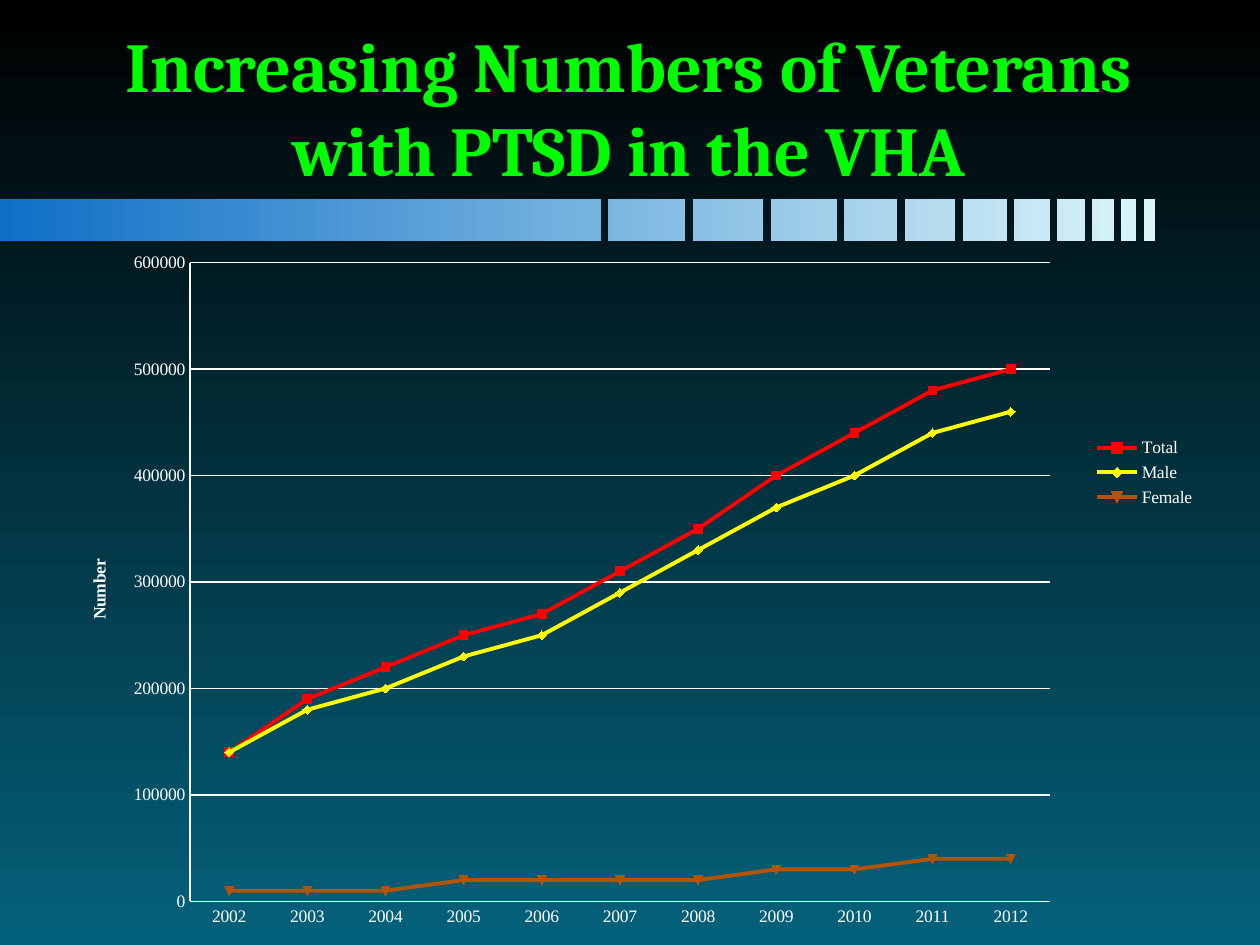
from lxml.etree import SubElement
from pptx import Presentation
from pptx.chart.data import CategoryChartData
from pptx.dml.color import RGBColor
from pptx.enum.chart import XL_CHART_TYPE as ChartType
from pptx.enum.chart import XL_LEGEND_POSITION as LegendPosition
from pptx.enum.chart import XL_TICK_MARK as TickMark
from pptx.enum.shapes import MSO_SHAPE as Shape
from pptx.enum.text import MSO_ANCHOR as Anchor
from pptx.enum.text import PP_ALIGN as Align
from pptx.oxml.ns import qn
from pptx.util import Inches, Pt

WHITE = RGBColor(0xFF, 0xFF, 0xFF)
BLACK = RGBColor(0x00, 0x00, 0x00)
TEAL = RGBColor(0x04, 0x61, 0x7B)
BLUE = RGBColor(0x0F, 0x6F, 0xC6)
PALE_BLUE = RGBColor(0xDB, 0xF5, 0xF9)
GREEN = RGBColor(0x00, 0xFF, 0x00)
RED = RGBColor(0xFF, 0x00, 0x00)
YELLOW = RGBColor(0xFF, 0xFF, 0x00)
BROWN = RGBColor(0xB2, 0x54, 0x06)
ORANGE = RGBColor(0xE5, 0x4B, 0x0D)

BAND_TOP, BAND_HEIGHT, BAND_WIDTH = 1.58, 0.33, 9.17
GAP_WIDTH = 0.06
GAP_LEFTS = (4.77, 5.44, 6.06, 6.64, 7.12, 7.58, 7.99, 8.33, 8.61, 8.84, 9.02)
PLOT_SHARES = {"x": 0.094, "y": 0.278, "w": 0.765, "h": 0.676}

YEARS = [str(year) for year in range(2002, 2013)]
VETERANS = {
    "Total": (RED, RED, (140000, 190000, 220000, 250000, 270000, 310000,
                         350000, 400000, 440000, 480000, 500000)),
    "Male": (YELLOW, YELLOW, (140000, 180000, 200000, 230000, 250000, 290000,
                              330000, 370000, 400000, 440000, 460000)),
    "Female": (BROWN, ORANGE, (10000, 10000, 10000, 20000, 20000, 20000,
                               20000, 30000, 30000, 40000, 40000)),
}


def set_gradient(fill, start, end, angle):
    """Fill with two colours at a counter-clockwise angle."""
    fill.gradient()
    fill.gradient_angle = angle
    for stop, color in zip(fill.gradient_stops, (start, end)):
        stop.color.rgb = color


def format_font(font, name="Times New Roman", size=10, color=WHITE, bold=False):
    """Set the face, size, colour and weight of a font."""
    font.name, font.size, font.bold = name, Pt(size), bold
    font.color.rgb = color


def write_text(frame, text, align=Align.CENTER, **style):
    """Write one formatted paragraph into a text frame."""
    frame.text = text
    paragraph = frame.paragraphs[0]
    paragraph.alignment = align
    format_font(paragraph.runs[0].font, **style)


def add_band_part(group, left, width):
    """Add one borderless rectangle at the height of the band."""
    part = group.shapes.add_shape(Shape.RECTANGLE, Inches(left), Inches(BAND_TOP),
                                  Inches(width), Inches(BAND_HEIGHT))
    part.shadow.inherit = False
    part.line.fill.background()
    return part


def add_band(slide):
    """Add the fading band and the gaps that show the background."""
    group = slide.shapes.add_group_shape()
    set_gradient(add_band_part(group, 0, BAND_WIDTH).fill, BLUE, PALE_BLUE, 0)
    for left in GAP_LEFTS:
        add_band_part(group, left, GAP_WIDTH).element.set("useBgFill", "1")


def set_plot_layout(chart):
    """Fix the inner plot area as shares of the chart's size."""
    plot_area = chart.element.find(".//" + qn("c:plotArea"))
    for layout in plot_area.findall(qn("c:layout")):
        plot_area.remove(layout)
    layout = SubElement(plot_area, qn("c:layout"))
    plot_area.insert(0, layout)
    manual = SubElement(layout, qn("c:manualLayout"))
    settings = {"layoutTarget": "inner", "xMode": "edge", "yMode": "edge", **PLOT_SHARES}
    for tag, value in settings.items():
        SubElement(manual, qn("c:" + tag)).set("val", str(value))


def format_line(line, color=WHITE, width=0.75):
    """Set the colour and width of a line."""
    line.color.rgb = color
    line.width = Pt(width)


def format_axes(chart):
    """Style both axes, the gridlines and the value title."""
    for axis in (chart.category_axis, chart.value_axis):
        axis.major_tick_mark = axis.minor_tick_mark = TickMark.NONE
        format_line(axis.format.line)
    values = chart.value_axis
    values.minimum_scale, values.maximum_scale, values.major_unit = 0, 600000, 100000
    values.has_major_gridlines = True
    format_line(values.major_gridlines.format.line)
    values.tick_labels.number_format = "0"
    values.tick_labels.number_format_is_linked = False
    write_text(values.axis_title.text_frame, "Number", bold=True)


def add_veterans_chart(slide):
    """Add the line chart of veterans by year."""
    data = CategoryChartData(number_format="0")
    data.categories = YEARS
    for name, (_, _, counts) in VETERANS.items():
        data.add_series(name, counts)
    chart = slide.shapes.add_chart(ChartType.LINE_MARKERS, Inches(0.67), 0,
                                   Inches(8.92), Inches(7.5), data).chart
    chart.has_title = False
    format_font(chart.font)
    chart.has_legend = True
    chart.legend.position = LegendPosition.RIGHT
    chart.legend.include_in_layout = False
    chart.plots[0].vary_by_categories = False
    for series, (color, marker_color, _) in zip(chart.plots[0].series, VETERANS.values()):
        series.smooth = False
        format_line(series.format.line, color, 2.25)
        series.marker.size = 5
        series.marker.format.fill.solid()
        series.marker.format.fill.fore_color.rgb = marker_color
        format_line(series.marker.format.line, color)
    format_axes(chart)
    set_plot_layout(chart)


def place_title(slide):
    """Place the title in front of the chart."""
    title = slide.shapes.title
    title.left, title.top = Inches(0.75), Inches(0.33)
    title.width, title.height = Inches(8.48), Inches(1.23)
    title.text_frame.vertical_anchor = Anchor.BOTTOM
    title.text_frame.word_wrap = True
    write_text(title.text_frame, "Increasing Numbers of Veterans with PTSD in the VHA",
               name="Cambria", size=40, color=GREEN, bold=True)
    slide.shapes.element.append(title.element)


def main():
    """Build and save the slide."""
    deck = Presentation()
    deck.slide_width, deck.slide_height = Inches(10), Inches(7.5)
    slide = deck.slides.add_slide(deck.slide_layouts[5])
    set_gradient(slide.background.fill, BLACK, TEAL, 270)
    add_band(slide)
    add_veterans_chart(slide)
    place_title(slide)
    deck.save("out.pptx")


if __name__ == "__main__":
    main()
